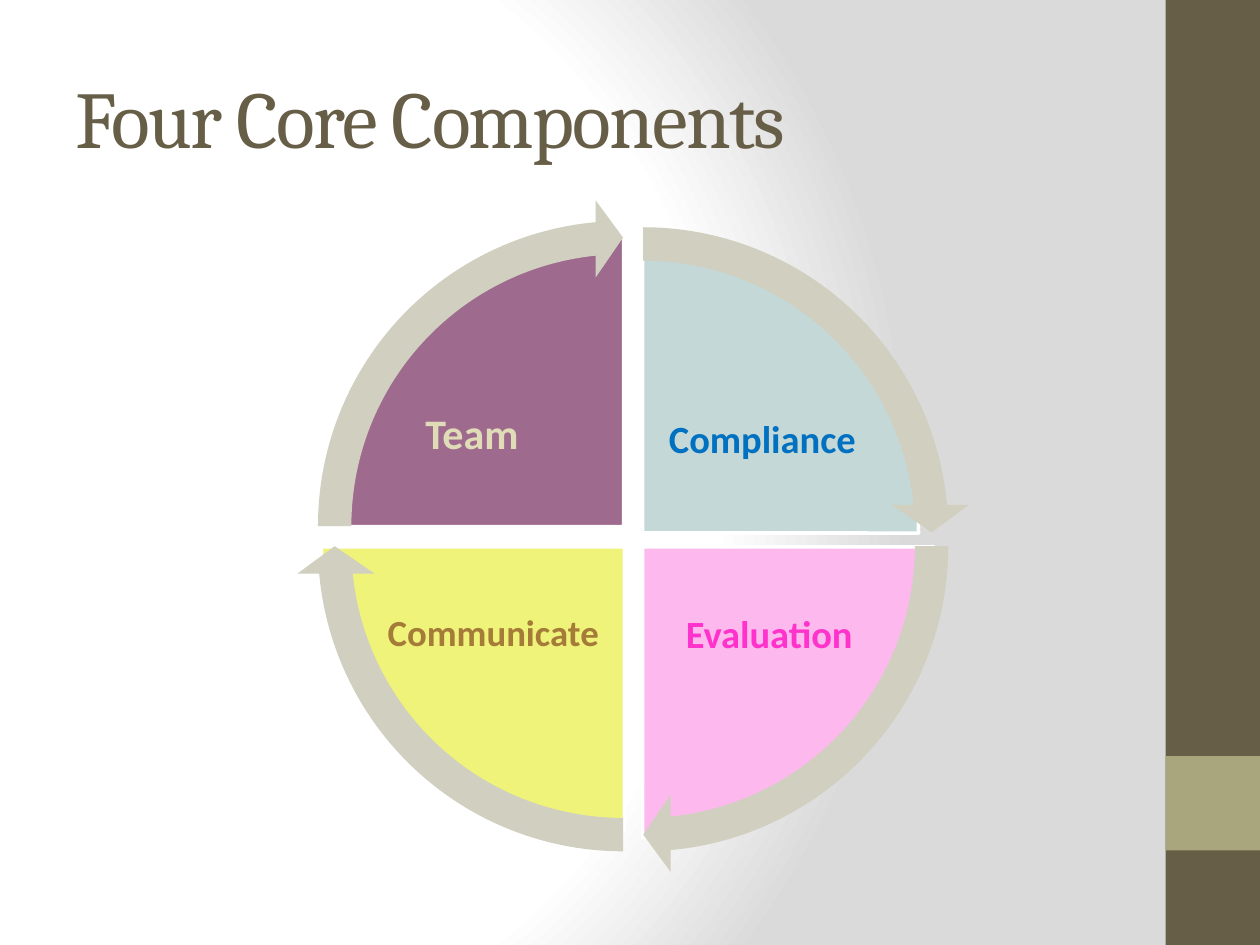
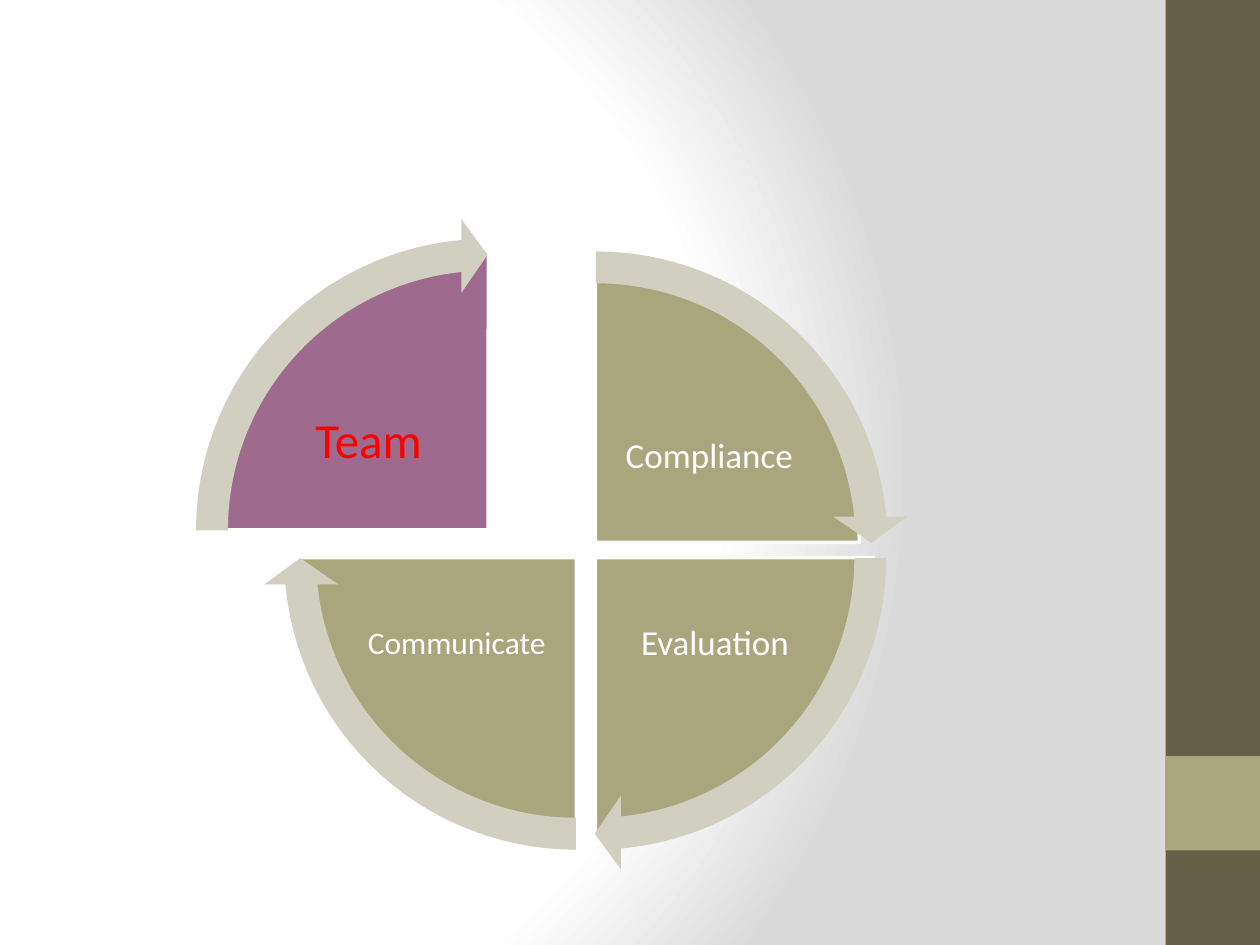
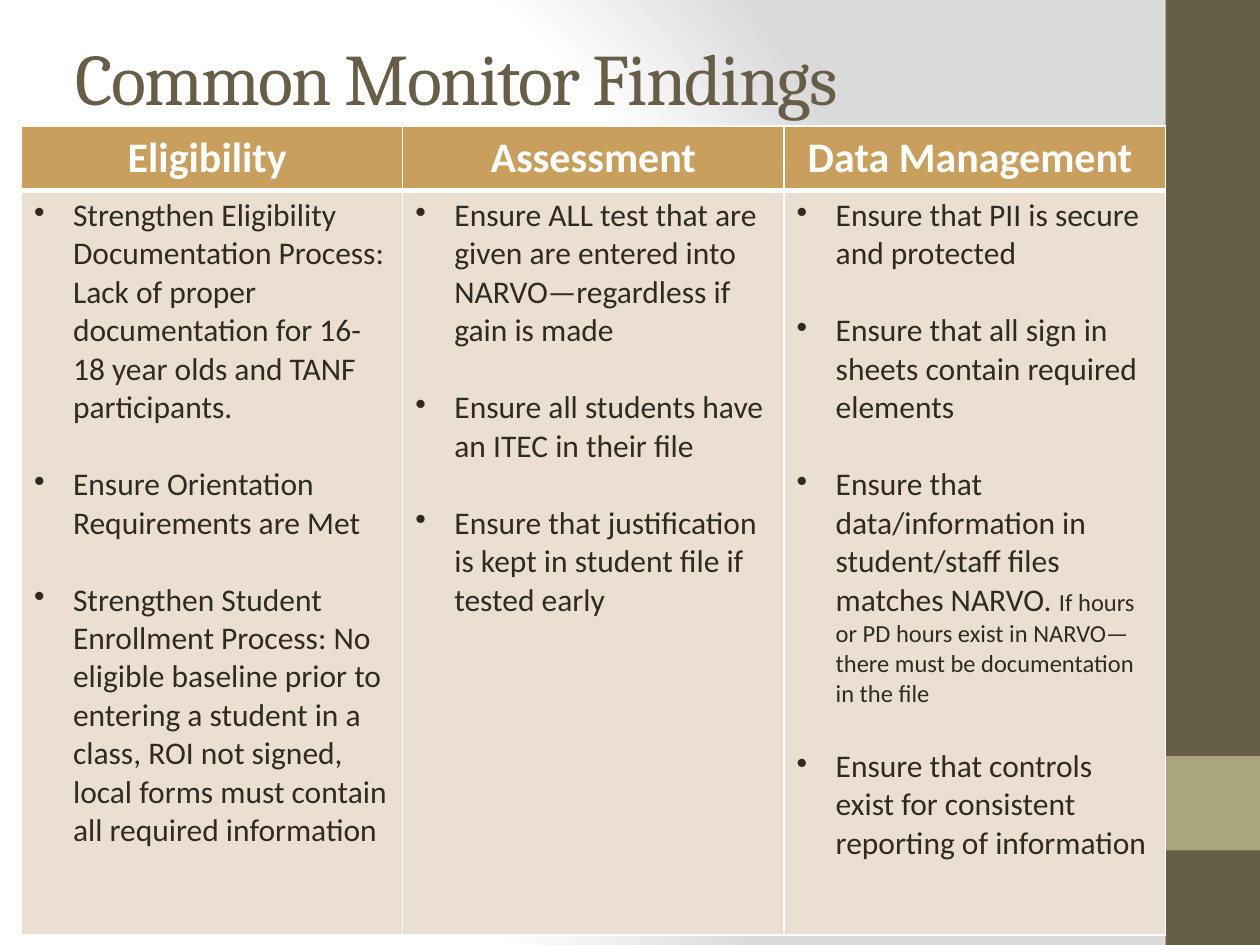
from dataclasses import dataclass
from typing import NamedTuple

from pptx import Presentation
from pptx.dml.color import RGBColor
from pptx.enum.shapes import MSO_SHAPE
from pptx.enum.text import MSO_ANCHOR, PP_ALIGN
from pptx.oxml import parse_xml
from pptx.oxml.ns import nsdecls, qn
from pptx.slide import Slide, SlideMaster
from pptx.table import _Cell
from pptx.text.text import TextFrame, _Paragraph
from pptx.util import Emu, Inches, Pt

# Square grid: one cell is a tenth of the slide's width
SLIDE_WIDTH, SLIDE_HEIGHT = Inches(10), Inches(7.5)
GRID_CELL = SLIDE_WIDTH // 10
GRID_ROWS = SLIDE_HEIGHT / GRID_CELL

# Colours
WHITE = RGBColor(0xFF, 0xFF, 0xFF)
EDGE_GREY = RGBColor(0xDA, 0xDA, 0xDA)
BROWN = RGBColor(0x67, 0x5E, 0x47)
OLIVE = RGBColor(0xA9, 0xA5, 0x7C)
ARROW_GREY = RGBColor(0xD1, 0xCF, 0xBF)
PLUM = RGBColor(0x9E, 0x6A, 0x8D)
PALE_TEAL = RGBColor(0xC4, 0xD8, 0xD7)
PINK = RGBColor(0xFD, 0xB9, 0xEE)
YELLOW = RGBColor(0xF0, 0xF3, 0x79)
BLUE = RGBColor(0x00, 0x70, 0xC0)
MAGENTA = RGBColor(0xFF, 0x33, 0xCC)
OCHRE = RGBColor(0xA4, 0x7B, 0x38)
CREAM = RGBColor(0xDF, 0xDC, 0xB7)
RED = RGBColor(0xFF, 0x00, 0x00)
HEADER_GOLD = RGBColor(0xC8, 0x9F, 0x5D)
BODY_BEIGE = RGBColor(0xEB, 0xDF, 0xD2)
INK = RGBColor(0x2F, 0x2B, 0x20)

TITLE_FONT, BODY_FONT = "Cambria", "Calibri"

# Angles: adjustment units per degree, and the sweep of one curved arrow
DEGREE = 0.6
ARROW_SWEEP = 84.54


def cells(count: float) -> Emu:
    return Emu(round(count * GRID_CELL))


class Box(NamedTuple):
    """Left, top, width and height in grid cells."""
    left: float
    top: float
    width: float
    height: float

    def lengths(self) -> list[Emu]:
        return [cells(value) for value in self]


@dataclass
class TextStyle:
    size: float
    color: RGBColor
    bold: bool = False
    font: str = BODY_FONT


@dataclass
class Quarter:
    label: str
    start: int  # degrees, clockwise from three o'clock
    fill: RGBColor
    style: TextStyle
    pie: Box
    label_box: Box
    arrow: tuple[float, float]


@dataclass
class Wheel:
    arrow_size: float
    quarters: list[Quarter]


@dataclass
class Column:
    header: str
    items: list[str]


# Slide contents
CORE_WHEEL = Wheel(5.19, [
    Quarter("Compliance", 270, PALE_TEAL, TextStyle(22, BLUE, True),
            Box(2.91, 1.92, 4.38, 4.62), Box(5.24, 2.87, 1.62, 1.26), (2.51, 1.63)),
    Quarter("Evaluation", 0, PINK, TextStyle(22, MAGENTA, True),
            Box(2.79, 2.03, 4.62, 4.62), Box(5.25, 4.42, 1.71, 1.26), (2.51, 1.74)),
    Quarter("Communicate", 90, YELLOW, TextStyle(21, OCHRE, True),
            Box(2.55, 2.09, 4.81, 4.5), Box(3.03, 4.42, 1.77, 1.23), (2.35, 1.74)),
    Quarter("Team\t", 180, PLUM, TextStyle(24, CREAM, True),
            Box(2.64, 1.87, 4.62, 4.62), Box(3.02, 2.83, 1.71, 1.26), (2.35, 1.58)),
])

TEAM_WHEEL = Wheel(4.96, [
    Quarter("Compliance", 270, OLIVE, TextStyle(20, WHITE),
            Box(2.63, 2.1, 4.19, 4.41), Box(4.86, 3.02, 1.54, 1.21), (2.25, 1.83)),
    Quarter("Evaluation", 0, OLIVE, TextStyle(20, WHITE),
            Box(2.52, 2.22, 4.41, 4.41), Box(4.86, 4.51, 1.63, 1.21), (2.24, 1.95)),
    Quarter("Communicate", 90, OLIVE, TextStyle(18, WHITE),
            Box(2.37, 2.22, 4.41, 4.41), Box(2.81, 4.51, 1.63, 1.21), (2.09, 1.95)),
    Quarter("Team", 180, PLUM, TextStyle(28, RED),
            Box(1.67, 2, 4.41, 4.41), Box(2.11, 2.91, 1.63, 1.21), (1.39, 1.73)),
])

SMALL_PRINT = "If hours or PD hours exist in NARVO—there must be documentation in the file"
FINDINGS = [
    Column("Eligibility ", [
        "Strengthen Eligibility Documentation Process: Lack of proper "
        "documentation for 16-18 year olds and TANF participants.",
        "Ensure Orientation Requirements are Met",
        "Strengthen Student Enrollment Process: No eligible baseline prior to entering "
        "a student in a class, ROI not signed, local forms must contain all required information",
    ]),
    Column("Assessment", [
        "Ensure ALL test that are given are entered into NARVO—regardless if gain is made",
        "Ensure all students have an ITEC in their file",
        "Ensure that justification is kept in student file if tested early",
    ]),
    Column("Data Management ", [
        "Ensure that PII is secure and protected",
        "Ensure that all sign in sheets contain required elements",
        "Ensure that data/information in student/staff files matches NARVO. " + SMALL_PRINT,
        "Ensure that controls exist for consistent reporting of information",
    ]),
]


# Text helpers
def add_run(paragraph: _Paragraph, text: str, style: TextStyle, spacing: int = 0) -> None:
    run = paragraph.add_run()
    run.text = text
    run.font.name = style.font
    run.font.size = Pt(style.size)
    run.font.bold = style.bold
    run.font.color.rgb = style.color
    if spacing:
        run.font._element.set("spc", str(spacing))


def add_text_frame(slide: Slide, box: Box) -> TextFrame:
    frame = slide.shapes.add_textbox(*box.lengths()).text_frame
    frame.word_wrap = True
    frame.vertical_anchor = MSO_ANCHOR.MIDDLE
    return frame


def add_title(slide: Slide, text: str, box: Box, size: float) -> None:
    paragraph = add_text_frame(slide, box).paragraphs[0]
    add_run(paragraph, text, TextStyle(size, BROWN, font=TITLE_FONT), spacing=-100)


# Shared background and side band
def set_background(master: SlideMaster) -> None:
    master.background.fill.solid()
    properties = master.element.find(".//" + qn("p:bgPr"))
    stops = "".join(
        f'<a:gs pos="{position * 1000}"><a:srgbClr val="{color}"/></a:gs>'
        for position, color in ((0, WHITE), (75, WHITE), (100, EDGE_GREY)))
    properties.replace(properties[0], parse_xml(
        f'<a:gradFill {nsdecls("a")} rotWithShape="1"><a:gsLst>{stops}</a:gsLst>'
        '<a:path path="circle"><a:fillToRect l="20000" t="50000" r="100000" b="50000"/>'
        '</a:path></a:gradFill>'))


def add_shape(slide: Slide, kind: MSO_SHAPE, box: Box, fill: RGBColor,
              adjustments: tuple[float, ...] = (), outline: float = 0) -> None:
    shape = slide.shapes.add_shape(kind, *box.lengths())
    shape.shadow.inherit = False
    shape.fill.solid()
    shape.fill.fore_color.rgb = fill
    for index, value in enumerate(adjustments):
        shape.adjustments[index] = value
    if outline:
        shape.line.color.rgb = WHITE
        shape.line.width = Pt(outline)
    else:
        shape.line.fill.background()


def add_banded_slide(presentation: Presentation) -> Slide:
    slide = presentation.slides.add_slide(presentation.slide_layouts[6])
    add_shape(slide, MSO_SHAPE.RECTANGLE, Box(9.25, 0, 0.75, GRID_ROWS), BROWN)
    add_shape(slide, MSO_SHAPE.RECTANGLE, Box(9.25, 6, 0.75, 0.75), OLIVE)
    return slide


# Wheel of four quarters
def add_quarter(slide: Slide, quarter: Quarter) -> None:
    end = (quarter.start + 90) % 360
    add_shape(slide, MSO_SHAPE.PIE, quarter.pie, quarter.fill,
              (quarter.start * DEGREE, end * DEGREE), outline=2)
    frame = add_text_frame(slide, quarter.label_box)
    frame.margin_left = frame.margin_right = cells(0.03)
    frame.margin_top = frame.margin_bottom = cells(0.03)
    paragraph = frame.paragraphs[0]
    paragraph.alignment = PP_ALIGN.CENTER
    paragraph.line_spacing = 0.9
    label, tab, _ = quarter.label.partition("\t")
    add_run(paragraph, label, quarter.style)
    if tab:
        add_run(paragraph, tab, TextStyle(14, WHITE))


def add_wheel(slide: Slide, wheel: Wheel) -> None:
    for quarter in wheel.quarters:
        add_quarter(slide, quarter)
    for quarter in wheel.quarters:
        tip = quarter.start + ARROW_SWEEP
        add_shape(slide, MSO_SHAPE.CIRCULAR_ARROW,
                  Box(*quarter.arrow, wheel.arrow_size, wheel.arrow_size), ARROW_GREY,
                  (0.051, 3.275, tip * DEGREE, quarter.start * DEGREE, 0.059))


# Table of findings
def style_cell(cell: _Cell, fill: RGBColor, top: float, bottom: float) -> None:
    properties = cell._tc.get_or_add_tcPr()
    for side, width in (("L", 1), ("R", 1), ("T", top), ("B", bottom)):
        properties.append(parse_xml(
            f'<a:ln{side} {nsdecls("a")} w="{Pt(width)}"><a:solidFill>'
            f'<a:srgbClr val="{WHITE}"/></a:solidFill></a:ln{side}>'))
    cell.fill.solid()
    cell.fill.fore_color.rgb = fill


def add_bullet(paragraph: _Paragraph, text: str) -> None:
    properties = paragraph._p.get_or_add_pPr()
    properties.set("marL", str(cells(0.31)))
    properties.set("indent", str(-cells(0.31)))
    properties.append(parse_xml(f'<a:buChar {nsdecls("a")} char="•"/>'))
    main_text, small, _ = text.partition(SMALL_PRINT)
    add_run(paragraph, main_text, TextStyle(18, INK))
    if small:
        add_run(paragraph, small, TextStyle(14, INK))


def add_findings(slide: Slide, columns: list[Column], box: Box, header_height: float) -> None:
    table = slide.shapes.add_table(2, len(columns), *box.lengths()).table
    table.horz_banding = False
    table.rows[0].height = cells(header_height)
    table.rows[1].height = cells(box.height - header_height)
    for index, column in enumerate(columns):
        table.columns[index].width = cells(box.width / len(columns))
        header, body = table.cell(0, index), table.cell(1, index)
        style_cell(header, HEADER_GOLD, top=1, bottom=3)
        style_cell(body, BODY_BEIGE, top=3, bottom=1)
        paragraph = header.text_frame.paragraphs[0]
        paragraph.alignment = PP_ALIGN.CENTER
        add_run(paragraph, column.header, TextStyle(24, WHITE, True))
        frame = body.text_frame
        for number, item in enumerate(column.items):
            paragraph = frame.add_paragraph() if number else frame.paragraphs[0]
            if number:
                paragraph.space_before = Pt(22)
            add_bullet(paragraph, item)


def main() -> None:
    presentation = Presentation()
    presentation.slide_width, presentation.slide_height = SLIDE_WIDTH, SLIDE_HEIGHT
    set_background(presentation.slide_master)

    # Slide 1: the four components
    slide = add_banded_slide(presentation)
    add_wheel(slide, CORE_WHEEL)
    add_title(slide, "Four Core Components", Box(0.5, 0.3, 8.33, 1.25), 46)

    # Slide 2: the team quarter pulled out
    slide = add_banded_slide(presentation)
    add_wheel(slide, TEAM_WHEEL)

    # Slide 3: findings
    slide = add_banded_slide(presentation)
    add_title(slide, "Common Monitor Findings", Box(0.5, 0.3, 9, 0.62), 41.4)
    add_findings(slide, FINDINGS, Box(0.17, 1, 9.08, 6.42), header_height=0.51)

    presentation.save("out.pptx")


if __name__ == "__main__":
    main()
